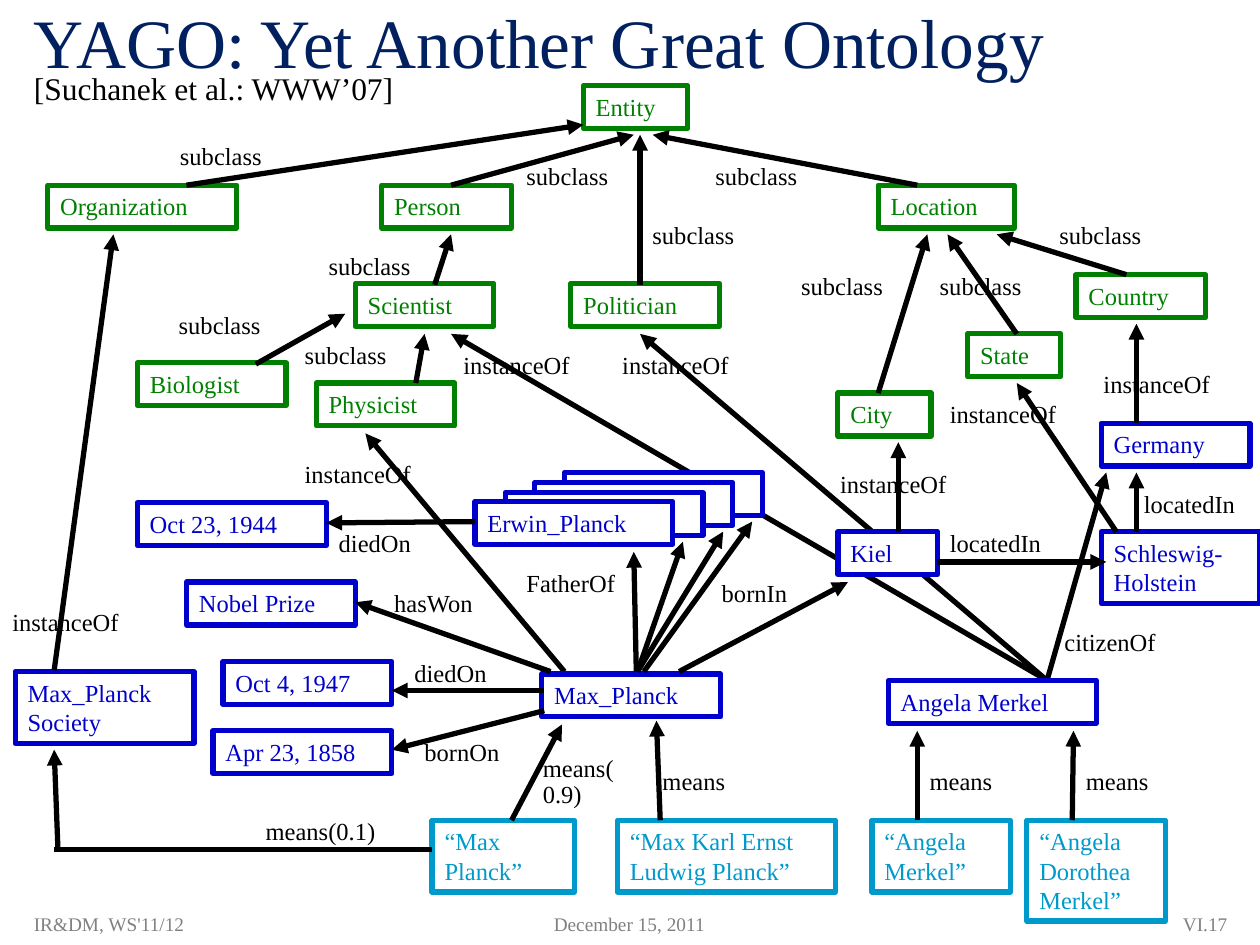
from typing import Any, NamedTuple

from lxml.etree import SubElement
from pptx import Presentation
from pptx.dml.color import RGBColor
from pptx.enum.shapes import MSO_CONNECTOR, MSO_SHAPE
from pptx.enum.text import MSO_ANCHOR, PP_ALIGN
from pptx.oxml.ns import qn
from pptx.slide import Slide
from pptx.util import Inches, Pt

FONT = "Times New Roman"
BLACK, GREY, NAVY = "000000", "808080", "002060"
CLASS, ENTITY, WORD = "008000", "0000CC", "0099CC"
STROKE = Pt(3)


class Node(NamedTuple):
    text: str
    left: float
    top: float
    width: float
    color: str
    lines: int = 1
    filled: bool = False


class Edge(NamedTuple):
    x1: float
    y1: float
    x2: float
    y2: float
    arrow: bool = True


class Label(NamedTuple):
    text: str
    left: float
    top: float
    width: float = 1.34
    height: float = 0.33
    size: float = 14
    color: str = BLACK
    align: PP_ALIGN = PP_ALIGN.LEFT
    anchor: MSO_ANCHOR = MSO_ANCHOR.TOP
    spacing: float = 1.0
    wrap: bool = True


BACK_EDGES = [
    Edge(8.31, 5.4, 8.78, 3.75),
    Edge(8.31, 5.4, 3.58, 2.65),
    Edge(8.31, 5.4, 5.08, 2.65),
    Edge(4.48, 5.33, 2.9, 3.44),
]

STACK = [
    Node("", 4.48 - 0.235 * i, 3.75 + 0.08 * i, 1.57, ENTITY, filled=True)
    for i in range(3)
]

NODES = STACK + [
    Node("Entity", 4.63, 0.68, 0.83, CLASS),
    Node("Organization", 0.38, 1.47, 1.5, CLASS),
    Node("Person", 3.03, 1.47, 1.03, CLASS),
    Node("Location", 6.97, 1.47, 1.08, CLASS),
    Node("Country", 8.54, 2.18, 1.03, CLASS),
    Node("Scientist", 2.82, 2.25, 1.1, CLASS),
    Node("Politician", 4.53, 2.25, 1.18, CLASS),
    Node("State", 7.68, 2.65, 0.74, CLASS),
    Node("Biologist", 1.09, 2.88, 1.18, CLASS),
    Node("Physicist", 2.51, 3.04, 1.1, CLASS),
    Node("City", 6.65, 3.12, 0.74, CLASS),
    Node("Germany", 8.74, 3.36, 1.18, ENTITY, filled=True),
    Node("Erwin_Planck", 3.77, 3.98, 1.57, ENTITY, filled=True),
    Node("Oct 23, 1944", 1.09, 3.99, 1.5, ENTITY),
    Node("Kiel", 6.65, 4.22, 0.79, ENTITY, filled=True),
    Node("Schleswig-Holstein", 8.74, 4.22, 1.26, ENTITY, 2, True),
    Node("Nobel Prize", 1.48, 4.62, 1.34, ENTITY),
    Node("Oct 4, 1947", 1.77, 5.25, 1.34, ENTITY),
    Node("Max_Planck Society", 0.12, 5.33, 1.42, ENTITY, 2),
    Node("Max_Planck", 4.3, 5.35, 1.42, ENTITY),
    Node("Angela Merkel", 7.05, 5.4, 1.65, ENTITY),
    Node("Apr 23, 1858", 1.69, 5.8, 1.42, ENTITY),
    Node("“Max Planck”", 3.43, 6.51, 1.13, WORD, 2),
    Node("“Max Karl Ernst Ludwig Planck”", 4.9, 6.51, 1.73, WORD, 2),
    Node("“Angela Merkel”", 6.92, 6.51, 1.1, WORD, 2),
    Node("“Angela Dorothea Merkel”", 8.15, 6.51, 1.1, WORD, 3),
]

FRONT_EDGES = [
    Edge(1.48, 1.47, 4.63, 0.99),
    Edge(3.58, 1.47, 5.03, 1.07),
    Edge(5.08, 2.26, 5.08, 1.07),
    Edge(7.28, 1.47, 5.18, 1.07),
    Edge(3.45, 2.26, 3.58, 1.86),
    Edge(6.97, 3.12, 7.36, 1.86),
    Edge(8.07, 2.65, 7.52, 1.86),
    Edge(8.94, 2.18, 7.91, 1.86),
    Edge(2.03, 2.89, 2.74, 2.49),
    Edge(3.3, 3.04, 3.37, 2.65),
    Edge(9.02, 3.36, 9.02, 2.57),
    Edge(8.86, 4.22, 8.07, 3.04),
    Edge(7.13, 4.22, 7.13, 3.51),
    Edge(9.02, 4.22, 9.02, 3.75),
    Edge(7.44, 4.46, 8.78, 4.46),
    Edge(3.77, 4.14, 2.59, 4.15),
    Edge(5.05, 5.33, 5.03, 4.38),
    Edge(5.06, 5.33, 5.42, 4.3),
    Edge(5.06, 5.33, 5.74, 4.22),
    Edge(5.11, 5.33, 5.97, 4.14),
    Edge(5.39, 5.33, 6.73, 4.62),
    Edge(4.37, 5.33, 2.82, 4.78),
    Edge(4.32, 5.48, 3.11, 5.48),
    Edge(4.32, 5.64, 3.11, 5.95),
    Edge(0.43, 5.32, 0.9, 1.86),
    Edge(0.46, 6.74, 0.43, 5.95),
    Edge(0.43, 6.74, 3.43, 6.74, arrow=False),
    Edge(4.06, 6.51, 4.46, 5.75),
    Edge(5.24, 6.51, 5.21, 5.72),
    Edge(7.28, 6.51, 7.28, 5.8),
    Edge(8.51, 6.51, 8.52, 5.8),
]

RELATIONS: dict[str, list[tuple[float, float]]] = {
    "subclass": [(1.33, 1.07), (4.08, 1.23), (5.58, 1.23), (5.08, 1.7), (8.31, 1.7),
                 (2.51, 1.94), (6.26, 2.1), (7.36, 2.1), (1.32, 2.41), (2.32, 2.65)],
    "instanceOf": [(3.58, 2.73), (4.84, 2.73), (8.66, 2.88), (7.44, 3.12),
                   (2.32, 3.59), (6.57, 3.67), (0, 4.77)],
    "means": [(5.16, 6.03), (7.28, 6.03), (8.52, 6.03)],
    "diedOn": [(2.59, 4.14), (3.19, 5.17)],
    "locatedIn": [(7.44, 4.14), (8.98, 3.83)],
    "bornOn": [(3.27, 5.8)],
    "bornIn": [(5.63, 4.54)],
    "FatherOf": [(4.08, 4.46)],
    "hasWon": [(3.03, 4.62)],
    "citizenOf": [(8.35, 4.93)],
    "means(0.1)": [(2.01, 6.43)],
}

FOOTER: dict[str, Any] = {"size": 11, "color": GREY, "anchor": MSO_ANCHOR.MIDDLE}

LABELS = [Label(text, *spot) for text, spots in RELATIONS.items() for spot in spots] + [
    Label("means(0.9)", 4.21, 5.95, 0.82, 0.52, spacing=0.9),
    Label("YAGO: Yet Another Great Ontology", 0.17, 0, 9.67, 0.65, 39.6, NAVY,
          anchor=MSO_ANCHOR.MIDDLE),
    Label("[Suchanek et al.: WWW’07]", 0.17, 0.5, 3.09, 0.4, 18, wrap=False),
    Label("IR&DM, WS'11/12", 0.17, 7.17, 3, **FOOTER),
    Label("December 15, 2011", 3.83, 7.17, 2.33, align=PP_ALIGN.CENTER, **FOOTER),
    Label("VI.17", 7.67, 7.17, 2.17, align=PP_ALIGN.RIGHT, **FOOTER),
]


def rgb(value: str) -> RGBColor:
    return RGBColor.from_string(value)


def assign(target: Any, values: dict[str, Any]) -> None:
    for name, value in values.items():
        setattr(target, name, value)


def write(box: Any, label: Label) -> None:
    assign(box.text_frame, {"word_wrap": label.wrap, "vertical_anchor": label.anchor})
    para = box.text_frame.paragraphs[0]
    assign(para, {"alignment": label.align, "line_spacing": label.spacing})
    span = para.add_run()
    span.text = label.text
    assign(span.font, {"name": FONT, "size": Pt(label.size)})
    span.font.color.rgb = rgb(label.color)


def draw_label(page: Slide, label: Label) -> None:
    frame = (label.left, label.top, label.width, label.height)
    write(page.shapes.add_textbox(*map(Inches, frame)), label)


def draw_node(page: Slide, node: Node) -> None:
    frame = (node.left, node.top, node.width, 0.11 + 0.23 * node.lines)
    box = page.shapes.add_shape(MSO_SHAPE.RECTANGLE, *map(Inches, frame))
    box.shadow.inherit = False
    if node.filled:
        box.fill.solid()
        box.fill.fore_color.rgb = rgb("FFFFFF")
    else:
        box.fill.background()
    box.line.color.rgb = rgb(node.color)
    box.line.width = STROKE
    if node.text:
        write(box, Label(node.text, *frame, color=node.color))


def draw_edge(page: Slide, edge: Edge) -> None:
    line = page.shapes.add_connector(MSO_CONNECTOR.STRAIGHT, *map(Inches, edge[:4]))
    line.line.color.rgb = rgb(BLACK)
    line.line.width = STROKE
    if edge.arrow:
        SubElement(line.get_or_add_ln(), qn("a:tailEnd"), type="triangle")
    SubElement(line._element.spPr, qn("a:effectLst"))


def main() -> None:
    deck = Presentation()
    assign(deck, {"slide_width": Inches(10), "slide_height": Inches(7.5)})
    page = deck.slides.add_slide(deck.slide_layouts[6])
    for draw, items in ((draw_edge, BACK_EDGES), (draw_node, NODES),
                        (draw_edge, FRONT_EDGES), (draw_label, LABELS)):
        for item in items:
            draw(page, item)
    deck.save("out.pptx")


if __name__ == "__main__":
    main()
